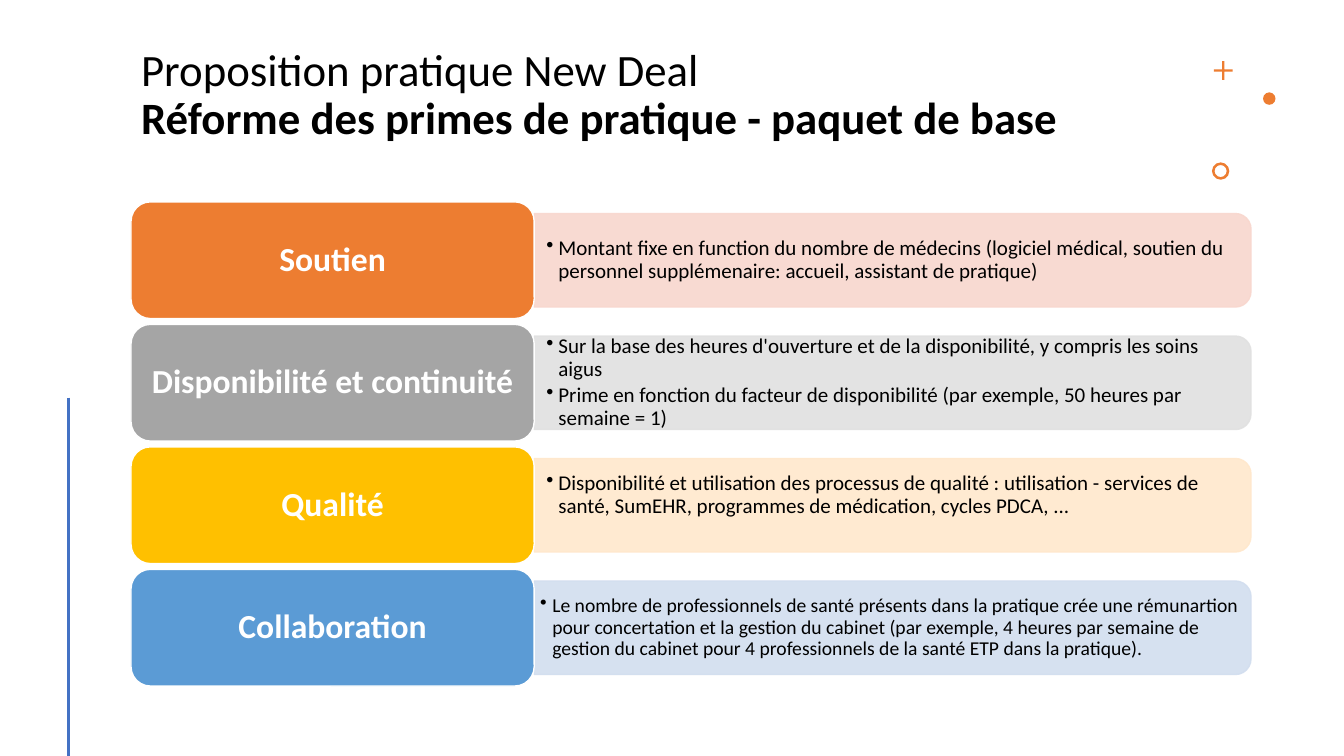
import lxml.etree
import pptx
import pptx.dml.color
import pptx.enum.shapes
import pptx.enum.text
import pptx.oxml.ns
import pptx.util

Pt = pptx.util.Pt
RGB = pptx.dml.color.RGBColor
SHAPE = pptx.enum.shapes.MSO_SHAPE
ALIGN = pptx.enum.text.PP_ALIGN
ANCHOR = pptx.enum.text.MSO_ANCHOR
qn = pptx.oxml.ns.qn

BLACK = RGB(0x00, 0x00, 0x00)
WHITE = RGB(0xFF, 0xFF, 0xFF)
ORANGE = RGB(0xED, 0x7D, 0x31)
GREY = RGB(0xA5, 0xA5, 0xA5)
GOLD = RGB(0xFF, 0xC0, 0x00)
SKY = RGB(0x5B, 0x9B, 0xD5)
BLUE = RGB(0x44, 0x72, 0xC4)
PALE_ORANGE = RGB(0xF8, 0xD7, 0xCE)
PALE_GREY = RGB(0xE1, 0xE1, 0xE1)
PALE_GOLD = RGB(0xFF, 0xE8, 0xCC)
PALE_BLUE = RGB(0xD2, 0xDE, 0xEF)

# Label, label colour, panel colour, bullets, text size, side inset, bottom inset
PRIMES = [
    ("Soutien", ORANGE, PALE_ORANGE,
     ["Montant fixe en function du nombre de médecins (logiciel médical, soutien du "
      "personnel supplémenaire: accueil, assistant de pratique)"], 15, 8.64, 4.3),
    ("Disponibilité et continuité", GREY, PALE_GREY,
     ["Sur la base des heures d'ouverture et de la disponibilité, y compris les soins aigus",
      "Prime en fonction du facteur de disponibilité (par exemple, 50 heures par semaine = 1)"],
     15, 8.64, 4.3),
    ("Qualité", GOLD, PALE_GOLD,
     ["Disponibilité et utilisation des processus de qualité : utilisation - services de "
      "santé, SumEHR, programmes de médication, cycles PDCA, ..."], 15, 8.64, 19),
    ("Collaboration", SKY, PALE_BLUE,
     ["Le nombre de professionnels de santé présents dans la pratique crée une rémunartion "
      "pour concertation et la gestion du cabinet (par exemple, 4 heures par semaine de "
      "gestion du cabinet pour 4 professionnels de la santé ETP dans la pratique)."],
     14, 4.3, 2.2),
]

LABEL_LEFT, LABEL_WIDTH, LABEL_HEIGHT = 93.6, 288, 83.4
FIRST_ROW, ROW_PITCH = 144.2, 87.5
PANEL_LEFT, PANEL_WIDTH, PANEL_HEIGHT = LABEL_LEFT + LABEL_WIDTH, 512, 66.8


def write(paragraph, text, size=15, color=BLACK, bold=False, align=ALIGN.LEFT, bullet=False):
    paragraph.alignment = align
    paragraph.line_spacing = 0.9
    run = paragraph.add_run()
    run.text = text
    run.font.name = "Calibri"
    run.font.size = Pt(size)
    run.font.bold = bold
    run.font.color.rgb = color
    if bullet:
        paragraph.space_after = Pt(size * 0.15)
        properties = paragraph._p.get_or_add_pPr()
        properties.set("marL", str(Pt(8.64)))
        properties.set("indent", str(-Pt(8.64)))
        lxml.etree.SubElement(properties, qn("a:buChar")).set("char", "•")


def set_frame(frame, anchor, left, top, right, bottom):
    frame.word_wrap = True
    frame.auto_size = pptx.enum.text.MSO_AUTO_SIZE.NONE
    frame.vertical_anchor = anchor
    frame.margin_left, frame.margin_top = Pt(left), Pt(top)
    frame.margin_right, frame.margin_bottom = Pt(right), Pt(bottom)


class PrimesSlide:
    def __init__(self, deck):
        self.slide = deck.slides.add_slide(deck.slide_layouts[5])
        self.shapes = self.slide.shapes

    def title(self, lead, topic):
        heading = self.shapes.title
        heading.left, heading.top = Pt(93.6), Pt(30.2)
        heading.width, heading.height = Pt(736.6), Pt(94.3)
        set_frame(heading.text_frame, ANCHOR.TOP, 7.2, 3.6, 7.2, 3.6)
        paragraph = heading.text_frame.paragraphs[0]
        write(paragraph, lead, size=32)
        paragraph.add_line_break()
        write(paragraph, topic, size=32, bold=True)

    def figure(self, kind, left, top, width, height, fill, outline=None, adjust=None):
        figure = self.shapes.add_shape(kind, Pt(left), Pt(top), Pt(width), Pt(height))
        figure.shadow.inherit = False
        figure.fill.solid()
        figure.fill.fore_color.rgb = fill
        if outline is None:
            figure.line.fill.background()
        else:
            figure.line.color.rgb = outline
            figure.line.width = Pt(1)
        if adjust is not None:
            figure.adjustments[0] = adjust
        return figure

    def rule(self, x, top, bottom, color):
        rule = self.shapes.add_connector(
            pptx.enum.shapes.MSO_CONNECTOR.STRAIGHT, Pt(x), Pt(top), Pt(x), Pt(bottom))
        rule.line.color.rgb = color
        rule.line.width = Pt(2)
        lxml.etree.SubElement(rule._element.spPr, qn("a:effectLst"))

    def panel(self, top, color):
        """Draw a pale panel, turned so that its rounded corners face right."""
        shift = (PANEL_WIDTH - PANEL_HEIGHT) / 2
        panel = self.figure(SHAPE.ROUND_2_SAME_RECTANGLE, PANEL_LEFT + shift, top - shift,
                            PANEL_HEIGHT, PANEL_WIDTH, color, outline=color)
        panel.rotation = 90
        for tint in panel._element.spPr.iter(qn("a:srgbClr")):
            lxml.etree.SubElement(tint, qn("a:alpha")).set("val", "90000")

    def bullets(self, top, height, texts, size, side, bottom):
        box = self.shapes.add_textbox(Pt(PANEL_LEFT), Pt(top), Pt(508.3), Pt(height))
        frame = box.text_frame
        set_frame(frame, ANCHOR.MIDDLE, side, side / 2, side, bottom)
        for index, text in enumerate(texts):
            paragraph = frame.add_paragraph() if index else frame.paragraphs[0]
            write(paragraph, text, size=size, bullet=True)

    def label(self, top, text, color):
        label = self.figure(SHAPE.ROUNDED_RECTANGLE, LABEL_LEFT, top, LABEL_WIDTH,
                            LABEL_HEIGHT, color, outline=WHITE)
        set_frame(label.text_frame, ANCHOR.MIDDLE, 4, 4, 4, 4)
        write(label.text_frame.paragraphs[0], text, size=24, color=WHITE, bold=True,
              align=ALIGN.CENTER)


def main():
    deck = pptx.Presentation()
    deck.slide_width, deck.slide_height = Pt(960), Pt(540)
    page = PrimesSlide(deck)

    page.title("Proposition pratique New Deal", "Réforme des primes de pratique - paquet de base")
    page.figure(SHAPE.CROSS, 867.1, 43.7, 13.4, 13.4, ORANGE, adjust=0.44)
    page.figure(SHAPE.OVAL, 902.2, 66, 8.9, 8.9, ORANGE)
    page.figure(SHAPE.DONUT, 865.7, 116, 12.4, 12.4, ORANGE, adjust=0.15)
    page.rule(49, 284, 540, BLUE)

    for row, (name, color, tint, texts, size, side, bottom) in enumerate(PRIMES):
        top = FIRST_ROW + row * ROW_PITCH
        panel_top = top + (LABEL_HEIGHT - PANEL_HEIGHT) / 2
        page.panel(panel_top, tint)
        page.bullets(panel_top + 3.2, PANEL_HEIGHT - 6.4, texts, size, side, bottom)
        page.label(top, name, color)

    deck.save("out.pptx")


if __name__ == "__main__":
    main()
